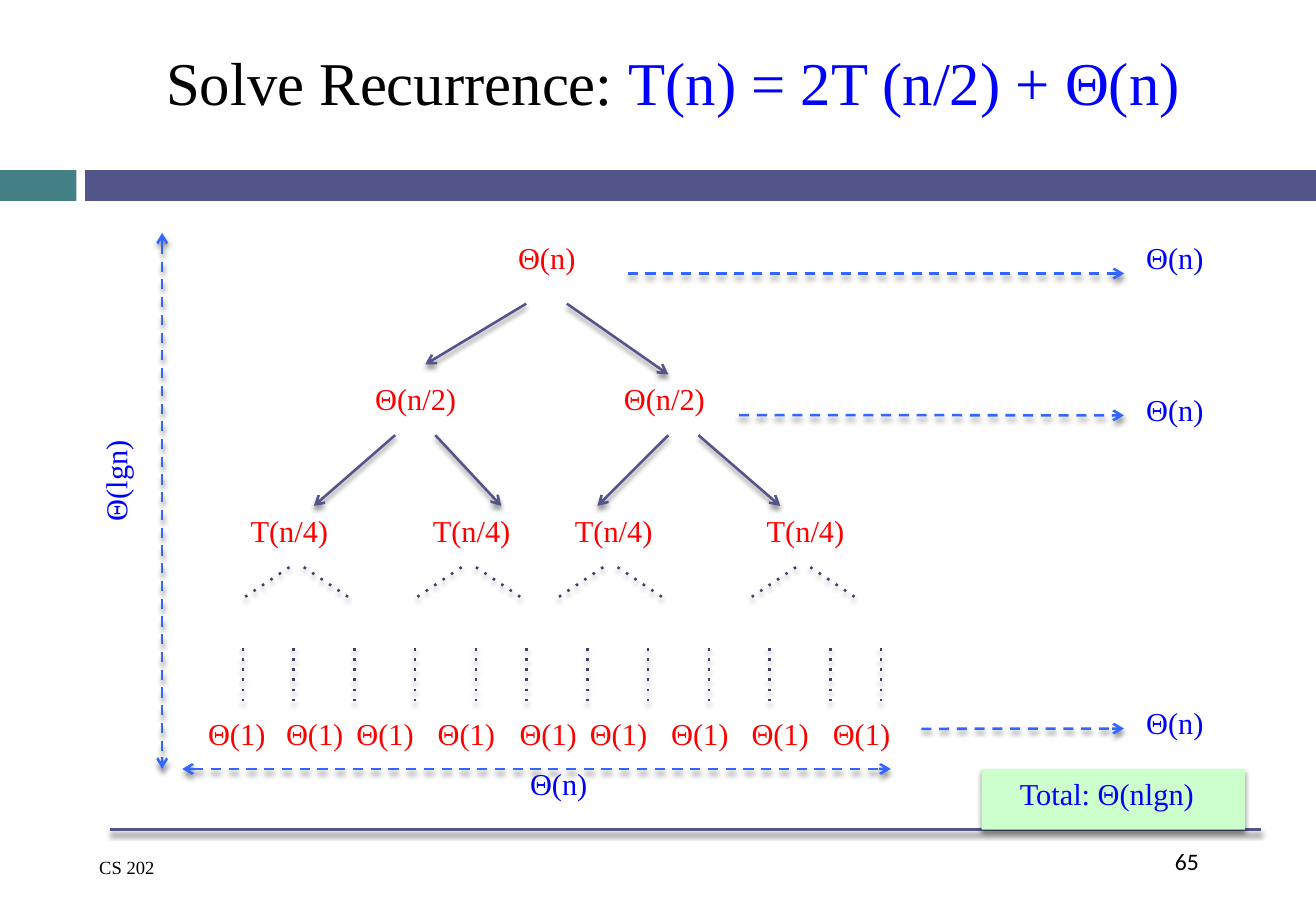
from pptx import Presentation
from pptx import util as u
from pptx.dml import color
from pptx.enum import shapes, text
from pptx.oxml import ns, parse_xml

SERIF = "Times New Roman"
BLACK, RED, BLUE = "000000", "FF0000", "0000FF"
SLATE, DUSK, SKY = "53548A", "3E3F68", "3366FF"
MID, LEFT = text.PP_ALIGN.CENTER, text.PP_ALIGN.LEFT


def rgb(code):
    return color.RGBColor.from_string(code)


def shade(shape):
    shape._element.spPr.append(parse_xml(
        f'<a:effectLst {ns.nsdecls("a")}>'
        '<a:outerShdw blurRad="38100" dist="30480" dir="5400000" rotWithShape="0">'
        '<a:srgbClr val="000000"><a:alpha val="45000"/></a:srgbClr>'
        '</a:outerShdw></a:effectLst>'))


def write(para, words, size=18, font=SERIF, ink=RED, align=MID):
    para.alignment = align
    run = para.add_run()
    run.text = words
    run.font.size = u.Pt(size)
    run.font.name = font
    run.font.color.rgb = rgb(ink)


def label(slide, words, mid, top, wide=2.13, high=1.27, turn=0, **form):
    box = slide.shapes.add_textbox(
        u.Cm(mid - wide / 2), u.Cm(top), u.Cm(wide), u.Cm(high))
    box.text_frame.word_wrap = False
    box.rotation = turn
    write(box.text_frame.paragraphs[0], words, **form)
    return box


def block(slide, x, y, wide, high, fill):
    rect = slide.shapes.add_shape(
        shapes.MSO_SHAPE.RECTANGLE, u.Cm(x), u.Cm(y), u.Cm(wide), u.Cm(high))
    rect.shadow.inherit = False
    rect.fill.solid()
    rect.fill.fore_color.rgb = rgb(fill)
    rect.line.fill.background()
    return rect


def line(slide, x1, y1, x2, y2, ink=SLATE, dash=None, ends=()):
    link = slide.shapes.add_connector(
        shapes.MSO_CONNECTOR.STRAIGHT, u.Cm(x1), u.Cm(y1), u.Cm(x2), u.Cm(y2))
    link.line.color.rgb = rgb(ink)
    link.line.width = u.Pt(1.5)
    stroke = link.line._get_or_add_ln()
    if dash:
        stroke.append(parse_xml(f'<a:prstDash {ns.nsdecls("a")} val="{dash}"/>'))
    for end in ends:
        stroke.append(parse_xml(f'<a:{end} {ns.nsdecls("a")} type="arrow"/>'))
    shade(link)
    return link


def frame(slide):
    block(slide, 0, 3.56, 1.6, 0.64, "438086")
    block(slide, 1.78, 3.56, 25.73, 0.64, SLATE)
    line(slide, 2.29, 17.35, 26.37, 17.35)
    label(slide, "65", 25.34, 17.58, wide=2.06, size=14, font="Calibri",
          ink=BLACK, align=LEFT)
    label(slide, "CS 202", 4.35, 17.78, wide=5.05, high=0.74, size=11,
          ink=BLACK, align=LEFT)


def head(slide):
    title = slide.shapes.title
    title.left, title.top = u.Cm(2.74), u.Cm(0)
    title.width, title.height = u.Cm(22.66), u.Cm(3.38)
    title.text_frame.vertical_anchor = text.MSO_ANCHOR.MIDDLE
    para = title.text_frame.paragraphs[0]
    write(para, "Solve Recurrence: ", size=36, ink=BLACK)
    write(para, "T(n) = 2T (n/2) + Θ(n)", size=36, ink=BLUE)


def tree(slide):
    label(slide, "Θ(n)", 11.43, 4.88)
    for mid in (8.69, 13.89):
        label(slide, "Θ(n/2)", mid, 7.82, wide=2.79)
    for x1, y1, x2, y2 in ((11, 6.35, 8.89, 7.62), (11.85, 6.35, 13.97, 7.83),
                           (8.26, 9.1, 6.56, 10.58), (9.1, 9.1, 10.48, 10.58),
                           (13.97, 9.1, 12.49, 10.58), (14.6, 9.1, 16.31, 10.58)):
        line(slide, x1, y1, x2, y2, ends=["tailEnd"])
    for mid, fork in ((6.05, 6.2), (9.86, 9.8), (12.83, 12.76), (16.84, 16.79)):
        label(slide, "T(n/4)", mid, 10.59, wide=2.79)
        for side in (-1, 1):
            line(slide, fork + side * 0.15, 11.86, fork + side * 1.09, 12.49,
                 ink=DUSK, dash="dot")
    for x in (5.08, 6.14, 7.41, 8.68, 9.95, 11.01,
              12.28, 13.55, 14.82, 16.09, 17.36, 18.42):
        line(slide, x, 13.55, x, 14.82, ink=DUSK, dash="dot")
    for mid in (4.95, 6.58, 8.05, 9.75, 11.46, 12.93, 14.63, 16.31, 18.01):
        label(slide, "Θ(1)", mid, 14.82, wide=1.73, high=1.02)


def costs(slide):
    both = ["headEnd", "tailEnd"]
    line(slide, 3.81, 16.08, 18.62, 16.08, ink=SKY, dash="dash", ends=both)
    label(slide, "Θ(n)", 11.68, 15.88, ink=BLUE)
    line(slide, 3.39, 4.87, 3.39, 16.08, ink=SKY, dash="dash", ends=both)
    label(slide, "Θ(lgn)", 2.54, 9.42, wide=2.79, turn=270, ink=BLUE)
    for x, y, top, join in ((13.12, 5.72, 4.88, False), (15.45, 8.68, 8.05, True),
                            (19.26, 15.24, 14.6, True)):
        cost = label(slide, "Θ(n)", 24.56, top, ink=BLUE)
        link = line(slide, x, y, 23.5, y, ink=SKY, dash="dash", ends=["tailEnd"])
        if join:
            link.end_connect(cost, 1)


def total(slide):
    card = block(slide, 20.52, 16.08, 5.51, 1.27, "CCFFCC")
    card._element.spPr.remove(card._element.spPr.find(ns.qn("a:effectLst")))
    shade(card)
    label(slide, "Total: Θ(nlgn)", 23.14, 16.08, wide=5.69, ink=BLUE)


def main():
    deck = Presentation()
    deck.slide_width, deck.slide_height = u.Cm(27.51), u.Cm(19.05)
    slide = deck.slides.add_slide(deck.slide_layouts[5])
    frame(slide)
    head(slide)
    tree(slide)
    costs(slide)
    total(slide)
    deck.save("out.pptx")


if __name__ == "__main__":
    main()
